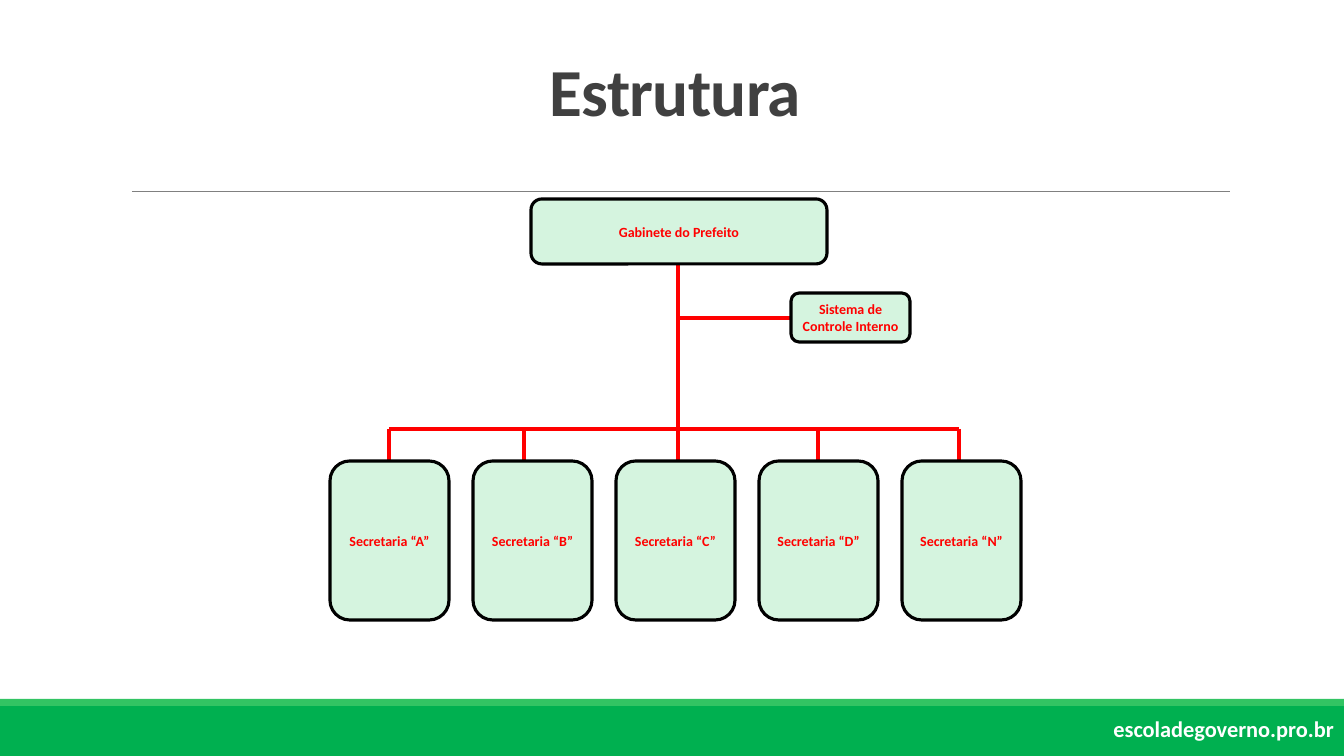
import pptx
import pptx.util
import pptx.dml.color
import pptx.enum.shapes
import pptx.enum.text
import pptx.oxml

TITLE = "Estrutura"
SITE = "escoladegoverno.pro.br"
HEAD = "Gabinete do Prefeito"
STAFF = "Sistema de Controle Interno"
UNITS = ["Secretaria “A”", "Secretaria “B”", "Secretaria “C”",
         "Secretaria “D”", "Secretaria “N”"]
DROPS = [389, 524, 678, 818, 959]
COLORS = {"band": "00B050", "strip": "32C463", "rule": "808080",
          "box": "D5F4DF", "edge": "000000", "link": "FF0000",
          "title": "404040", "site": "FFFFFF"}
WIDTH, HEIGHT = 1344, 756
TRUNK, BAR, ROW, STEP = 678, 429, 461, 143

MSO = pptx.enum.shapes.MSO_SHAPE
ALIGN = pptx.enum.text.PP_ALIGN
ANCHOR = pptx.enum.text.MSO_ANCHOR


def px(*vals):
    return [round(v * 914400 / 100.8) for v in vals]


def rgb(name):
    return pptx.dml.color.RGBColor.from_string(COLORS[name])


def style(par, text, size, color, align):
    par.text = text
    par.alignment = align
    par.font.name = "Calibri"
    par.font.size = pptx.util.Pt(size)
    par.font.bold = True
    par.font.color.rgb = rgb(color)


def block(kind, area, fill):
    shape = slide.shapes.add_shape(kind, *px(*area))
    shape.shadow.inherit = False
    shape.fill.solid()
    shape.fill.fore_color.rgb = rgb(fill)
    shape.line.fill.background()
    return shape


def box(area, text):
    shape = block(MSO.ROUNDED_RECTANGLE, area, "box")
    shape.line.color.rgb = rgb("edge")
    shape.line.width = pptx.util.Pt(2.25)
    frame = shape.text_frame
    frame.word_wrap = True
    frame.vertical_anchor = ANCHOR.MIDDLE
    frame.margin_left, frame.margin_right = px(7, 7)
    frame.margin_top, frame.margin_bottom = px(4, 4)
    style(frame.paragraphs[0], text, 10, "link", ALIGN.CENTER)


def line(ends, color="link", width=2.25):
    link = slide.shapes.add_connector(
        pptx.enum.shapes.MSO_CONNECTOR.STRAIGHT, *px(*ends))
    link.line.color.rgb = rgb(color)
    link.line.width = pptx.util.Pt(width)
    link._element.spPr.append(pptx.oxml.parse_xml(
        '<a:effectLst xmlns:a="http://schemas.openxmlformats.org/drawingml/2006/main"/>'))


deck = pptx.Presentation()
deck.slide_width, deck.slide_height = px(WIDTH, HEIGHT)
slide = deck.slides.add_slide(deck.slide_layouts[5])

block(MSO.RECTANGLE, (0, 706, WIDTH, 50), "band")
block(MSO.RECTANGLE, (0, 699, WIDTH, 7), "strip")
line((132, 191, 1230, 191), "rule", 0.5)

site = slide.shapes.add_textbox(*px(1100, 710, 244, 37)).text_frame
site.word_wrap = False
style(site.paragraphs[0], SITE, 16, "site", ALIGN.RIGHT)

line((TRUNK, 264, TRUNK, BAR))
line((TRUNK, 318, 791, 318))
line((DROPS[0], BAR, DROPS[-1], BAR))
for x in DROPS:
    line((x, BAR, x, ROW))

box((531, 199, 296, 65), HEAD)
box((791, 293, 119, 49), STAFF)
for i, unit in enumerate(UNITS):
    box((330 + i * STEP, ROW, 119, 159), unit)

title = slide.shapes.title
title.left, title.top, title.width, title.height = px(121, 31, 1109, 104)
frame = title.text_frame
frame.auto_size = pptx.enum.text.MSO_AUTO_SIZE.NONE
frame.vertical_anchor = ANCHOR.BOTTOM
par = frame.paragraphs[0]
style(par, TITLE, 48, "title", ALIGN.CENTER)
par.line_spacing = 0.85
par.runs[0]._r.get_or_add_rPr().set("spc", "-50")

deck.save("out.pptx")
